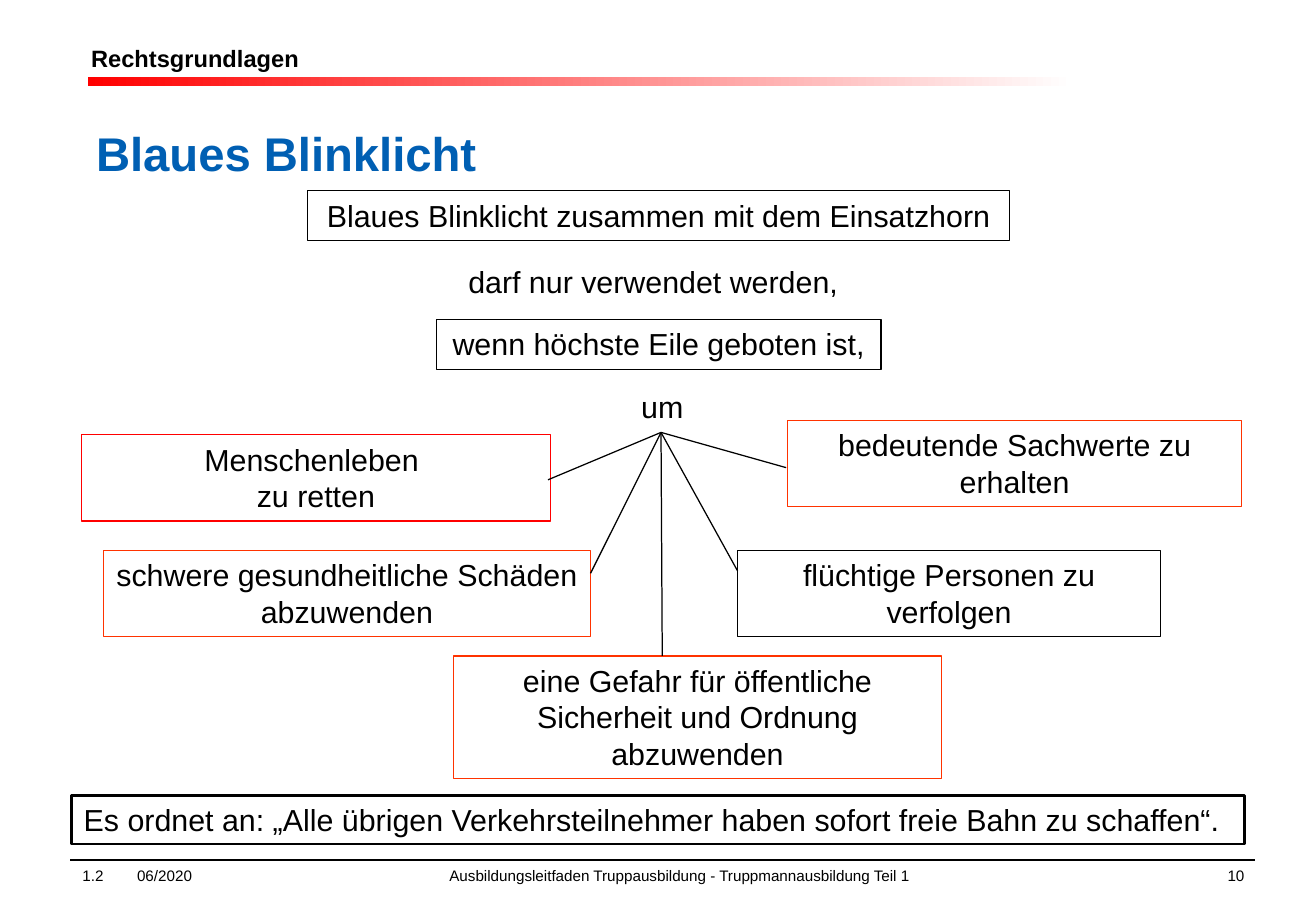
from lxml.etree import SubElement
from pptx import Presentation
from pptx.dml.color import RGBColor
from pptx.enum.dml import MSO_FILL
from pptx.enum.shapes import MSO_CONNECTOR, MSO_SHAPE
from pptx.enum.text import MSO_ANCHOR, MSO_AUTO_SIZE, PP_ALIGN
from pptx.oxml.ns import qn
from pptx.util import Inches, Pt

COLORS = {"black": "000000", "white": "FFFFFF", "blue": "005FB3",
          "red": "FF0000", "orange": "FF3300"}
FONT = "Arial"


def write(box, text, size=18, color="black", bold=False, align=PP_ALIGN.LEFT,
          anchor=MSO_ANCHOR.TOP, margins=(0.1, 0.05), tabs=()):
    """Fill a shape with formatted text, one paragraph per line."""
    frame = box.text_frame
    frame.word_wrap = True
    frame.auto_size = MSO_AUTO_SIZE.NONE
    frame.vertical_anchor = anchor
    frame.margin_left = frame.margin_right = Inches(margins[0])
    frame.margin_top = frame.margin_bottom = Inches(margins[1])
    frame.text = text
    for para in frame.paragraphs:
        para.alignment = align
        para.space_before = Pt(0)
        if tabs:
            tab_list = SubElement(para._p.get_or_add_pPr(), qn("a:tabLst"))
            for position in tabs:
                SubElement(tab_list, qn("a:tab"), pos=str(Inches(position)), algn="l")
        for span in para.runs:
            span.font.name = FONT
            span.font.size = Pt(size)
            span.font.bold = bold
            span.font.color.rgb = RGBColor.from_string(COLORS[color])


def add_line(page, start, end):
    line = page.shapes.add_connector(
        MSO_CONNECTOR.STRAIGHT, *[Inches(value) for value in (*start, *end)])
    line.line.color.rgb = RGBColor.from_string(COLORS["black"])
    line.line.width = Pt(0.75)
    SubElement(line._element.spPr, qn("a:effectLst"))


deck = Presentation()
deck.slide_width = Inches(10.83)
deck.slide_height = Inches(7.5)
page = deck.slides.add_slide(deck.slide_layouts[5])

# Header
bar = page.shapes.add_shape(
    MSO_SHAPE.RECTANGLE, Inches(0.72), Inches(0.63), Inches(8.12), Inches(0.08))
bar.shadow.inherit = False
bar.line.fill.background()
bar.fill.gradient()
bar.fill.gradient_angle = 0
for stop, position, color in zip(bar.fill.gradient_stops, (0, 1), ("red", "white")):
    stop.position = position
    stop.color.rgb = RGBColor.from_string(COLORS[color])

chapter = page.shapes.add_textbox(Inches(0.73), Inches(0.35), Inches(4.46), Inches(0.26))
write(chapter, "Rechtsgrundlagen", size=14, bold=True, margins=(0.02, 0.01))

title = page.shapes.title
title.left, title.top = Inches(0.69), Inches(0.94)
title.width, title.height = Inches(9.44), Inches(0.63)
write(title, "Blaues Blinklicht", size=28, color="blue", bold=True,
      anchor=MSO_ANCHOR.MIDDLE)

# Framed statements: text, left, top, width, height, line colour, line width, alignment
CENTER, LEFT = PP_ALIGN.CENTER, PP_ALIGN.LEFT
statements = [
    ("Blaues Blinklicht zusammen mit dem Einsatzhorn",
     2.53, 1.57, 5.78, 0.41, "black", 0.75, CENTER),
    ("wenn höchste Eile geboten ist,", 3.59, 2.63, 3.66, 0.41, "black", 0.75, CENTER),
    ("Menschenleben \nzu retten", 0.67, 3.58, 3.86, 0.71, "red", 0.75, CENTER),
    ("schwere gesundheitliche Schäden abzuwenden",
     0.85, 4.53, 4.01, 0.71, "orange", 0.75, CENTER),
    ("eine Gefahr für öffentliche Sicherheit und Ordnung abzuwenden",
     3.73, 5.4, 4.02, 1.01, "orange", 0.75, CENTER),
    ("bedeutende Sachwerte zu erhalten", 6.48, 3.46, 3.74, 0.71, "orange", 0.75, CENTER),
    ("flüchtige Personen zu verfolgen", 6.07, 4.53, 3.48, 0.71, "black", 0.75, CENTER),
    ("Es ordnet an: „Alle übrigen Verkehrsteilnehmer haben sofort freie Bahn zu schaffen“.",
     0.59, 6.55, 9.65, 0.4, "black", 1.5, LEFT),
]
for text, left, top, width, height, color, line_width, align in statements:
    box = page.shapes.add_shape(
        MSO_SHAPE.RECTANGLE, Inches(left), Inches(top), Inches(width), Inches(height))
    box.shadow.inherit = False
    box.fill.background()
    box.line.color.rgb = RGBColor.from_string(COLORS[color])
    box.line.width = Pt(line_width)
    write(box, text, align=align)

# Linking words between the statements
for text, left, top, width in [("darf nur verwendet werden,", 2.43, 2.12, 5.89),
                               ("um", 4.35, 3.15, 2.2)]:
    box = page.shapes.add_textbox(Inches(left), Inches(top), Inches(width), Inches(0.4))
    write(box, text, align=CENTER)

# Fan from "um" to the five purposes
for end in [(4.51, 3.95), (6.47, 3.85), (4.86, 4.72), (5.45, 5.4), (6.07, 4.7)]:
    add_line(page, (5.44, 3.56), end)

# Footer
add_line(page, (0.58, 7.08), (10.33, 7.08))
footer = page.shapes.add_textbox(Inches(0.58), Inches(7.08), Inches(9.27), Inches(0.42))
write(footer,
      "1.2\t06/2020\tAusbildungsleitfaden Truppausbildung - Truppmannausbildung Teil 1",
      size=9, tabs=(0.45, 3.02))
number = page.shapes.add_textbox(Inches(8.08), Inches(7.08), Inches(2.26), Inches(0.18))
write(number, "10", size=9, align=PP_ALIGN.RIGHT)

deck.save("out.pptx")
